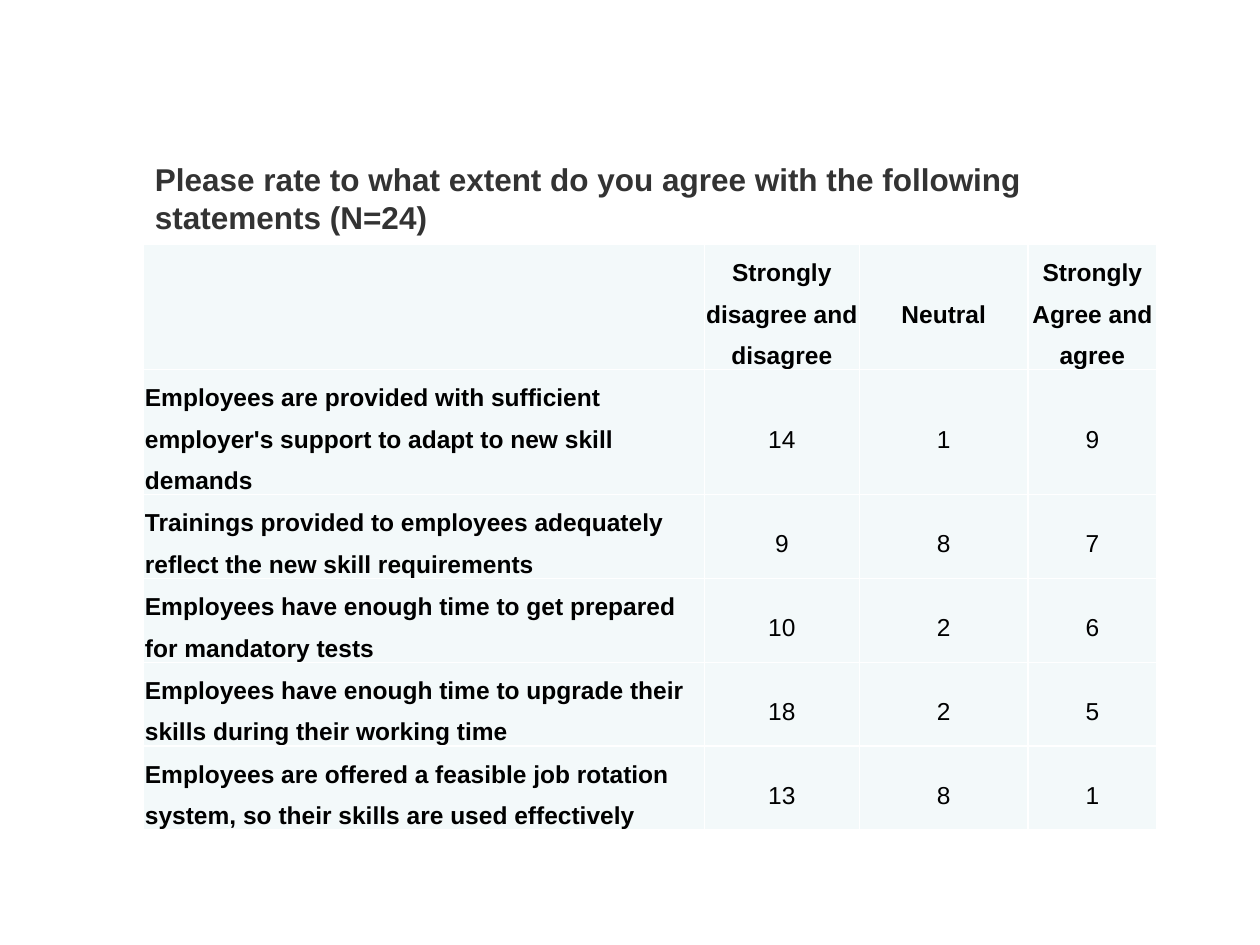
"""Build a slide with a survey question and its table of answers."""
from dataclasses import dataclass

from lxml import etree
from pptx import Presentation
from pptx import util as u
from pptx.dml.color import RGBColor
from pptx.enum import text
from pptx.oxml import ns

INK = RGBColor(0x00, 0x00, 0x00)
GREY = RGBColor(0x33, 0x33, 0x33)
PALE = RGBColor(0xF3, 0xF9, 0xFA)
WHITE = RGBColor(0xFF, 0xFF, 0xFF)
FONT = "Arial"
WIDTHS = (4.45, 1.23, 1.34, 1.02)
TALL, SHORT = 0.99, 0.66


@dataclass
class Row:
    cells: tuple[str, ...]
    height: float = SHORT


ROWS = (
    Row(("", "Strongly disagree and disagree", "Neutral",
         "Strongly Agree and agree"), TALL),
    Row(("Employees are provided with sufficient employer's support "
         "to adapt to new skill demands", "14", "1", "9"), TALL),
    Row(("Trainings provided to employees adequately reflect "
         "the new skill requirements", "9", "8", "7")),
    Row(("Employees have enough time to get prepared "
         "for mandatory tests", "10", "2", "6")),
    Row(("Employees have enough time to upgrade their skills "
         "during their working time", "18", "2", "5")),
    Row(("Employees are offered a feasible job rotation system, "
         "so their skills are used effectively", "13", "8", "1")),
)


def add_run(para, words: str, size: int, color: RGBColor, bold: bool) -> None:
    run = para.add_run()
    run.text = words
    font = run.font
    font.name, font.size, font.bold = FONT, u.Pt(size), bold
    font.color.rgb = color


def add_title(slide, words: str) -> None:
    title = slide.shapes.title
    title.left, title.top = u.Inches(1.13), u.Inches(1.22)
    title.width, title.height = u.Inches(7.72), u.Inches(0.71)
    frame = title.text_frame
    frame.word_wrap = True
    frame.auto_size = text.MSO_AUTO_SIZE.NONE
    frame.vertical_anchor = text.MSO_ANCHOR.TOP
    para = frame.paragraphs[0]
    para.alignment = text.PP_ALIGN.LEFT
    add_run(para, words, 18, GREY, True)


def set_edges(cell) -> None:
    props = cell._tc.get_or_add_tcPr()
    for side in ("lnL", "lnR", "lnT", "lnB"):
        line = etree.SubElement(props, ns.qn(f"a:{side}"), w=str(u.Pt(1)))
        fill = etree.SubElement(line, ns.qn("a:solidFill"))
        etree.SubElement(fill, ns.qn("a:srgbClr"), val=str(WHITE))


def fill_cell(cell, words: str, head: bool, label: bool) -> None:
    set_edges(cell)
    cell.fill.solid()
    cell.fill.fore_color.rgb = PALE
    cell.margin_left = cell.margin_right = cell.margin_top = u.Inches(0.01)
    cell.margin_bottom = 0
    cell.vertical_anchor = (text.MSO_ANCHOR.BOTTOM if label
                            else text.MSO_ANCHOR.MIDDLE)
    para = cell.text_frame.paragraphs[0]
    para.alignment = text.PP_ALIGN.LEFT if label else text.PP_ALIGN.CENTER
    para.line_spacing = 1.5
    if words:
        add_run(para, words, 14, INK, head or label)


def add_grid(slide, rows: tuple[Row, ...]) -> None:
    high = sum(row.height for row in rows)
    grid = slide.shapes.add_table(
        len(rows), len(WIDTHS), u.Inches(1.14), u.Inches(1.94),
        u.Inches(sum(WIDTHS)), u.Inches(high)).table
    grid.horz_banding = False
    for col, width in zip(grid.columns, WIDTHS):
        col.width = u.Inches(width)
    for i, row in enumerate(rows):
        grid.rows[i].height = u.Inches(row.height)
        for j, words in enumerate(row.cells):
            fill_cell(grid.cell(i, j), words, i == 0, j == 0)


def main() -> None:
    deck = Presentation()
    deck.slide_width, deck.slide_height = u.Inches(10), u.Inches(7.5)
    slide = deck.slides.add_slide(deck.slide_layouts[5])
    add_title(slide, "Please rate to what extent do you agree "
                     "with the following statements (N=24)")
    add_grid(slide, ROWS)
    deck.save("out.pptx")


if __name__ == "__main__":
    main()
